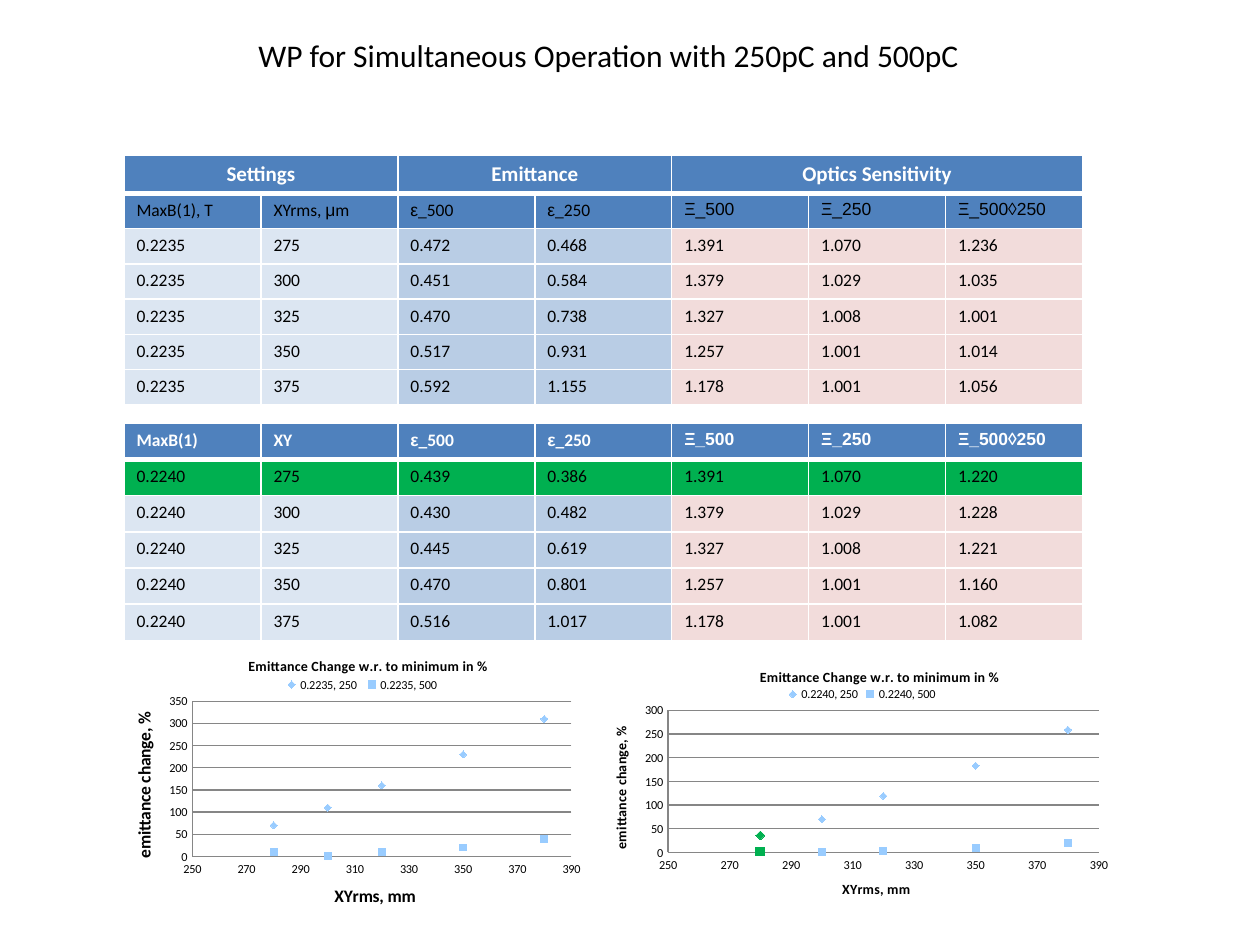
from dataclasses import dataclass
from itertools import groupby

from lxml.etree import SubElement
from pptx import Presentation
from pptx.chart.data import XyChartData
from pptx.dml.color import RGBColor
from pptx.enum.chart import (
    XL_CHART_TYPE as ChartType,
    XL_LEGEND_POSITION as LegendSpot,
    XL_MARKER_STYLE as Marker,
    XL_TICK_MARK as Tick,
)
from pptx.enum.text import MSO_ANCHOR as Anchor, PP_ALIGN as Align
from pptx.oxml.ns import qn
from pptx.util import Cm, Pt

COLORS = {
    "black": "000000",
    "white": "FFFFFF",
    "header": "4F81BD",
    "settings": "DCE6F2",
    "emittance": "B9CDE5",
    "optics": "F2DCDB",
    "chosen": "00B050",
    "marker": "99CCFF",
    "grid": "868686",
}
FONT, GREEK_FONT = "Calibri", "Arial"
COLUMN_FILLS = ["settings"] * 2 + ["emittance"] * 2 + ["optics"] * 3
SYMBOLS = ["ε_500", "ε_250", "Ξ_500", "Ξ_250", "Ξ_500◊250"]
SIZES_XY = [275, 300, 325, 350, 375]
PLOTTED_SIZES = [280, 300, 320, 350, 380]
OPTICS = [("1.391", "1.070"), ("1.379", "1.029"), ("1.327", "1.008"),
          ("1.257", "1.001"), ("1.178", "1.001")]
GROUPS = [("Settings", 0, 1), ("Emittance", 2, 3), ("Optics Sensitivity", 4, 6)]


@dataclass
class Scan:
    """Results for one field value: emittances and the combined optics column."""
    field: str
    emittance_500: list[str]
    emittance_250: list[str]
    combined: list[str]

    def rows(self) -> list[list[str]]:
        return [
            [self.field, str(size), e500, e250, *optics, combined]
            for size, e500, e250, optics, combined in zip(
                SIZES_XY, self.emittance_500, self.emittance_250, OPTICS, self.combined)
        ]


@dataclass
class Plot:
    """A scatter chart; title, legend and inner are fractions of its box."""
    field: str
    box: tuple[float, ...]
    title: tuple[float, ...]
    legend: tuple[float, ...]
    inner: tuple[float, ...]
    axis_title_size: int
    top: int
    change_250: list[int]
    change_500: list[int]
    chosen_point: int | None = None


SCANS = [
    Scan("0.2235", ["0.472", "0.451", "0.470", "0.517", "0.592"],
         ["0.468", "0.584", "0.738", "0.931", "1.155"],
         ["1.236", "1.035", "1.001", "1.014", "1.056"]),
    Scan("0.2240", ["0.439", "0.430", "0.445", "0.470", "0.516"],
         ["0.386", "0.482", "0.619", "0.801", "1.017"],
         ["1.220", "1.228", "1.221", "1.160", "1.082"]),
]
PLOTS = [
    Plot("0.2235", (2.31, 13.13, 9.8, 5.59), (0.27, 0.01), (0.34, 0.09, 0.34, 0.06),
         (0.16, 0.18, 0.78, 0.56), 10, 350,
         [70, 110, 160, 230, 310], [10, 0, 10, 20, 40]),
    Plot("0.2240", (12.09, 13.13, 10.59, 5.41), (0.3, 0.05), (0.35, 0.13, 0.3, 0.06),
         (0.13, 0.22, 0.82, 0.53), 8, 300,
         [36, 70, 119, 183, 259], [2, 0, 3, 9, 20], chosen_point=0),
]


def color(name: str) -> RGBColor:
    return RGBColor.from_string(COLORS[name])


def style_font(font, size: float, ink: str = "black", bold: bool = False,
               face: str = FONT) -> None:
    font.size, font.bold, font.name = Pt(size), bold, face
    font.color.rgb = color(ink)


def write(frame, text: str, size: float = 10, ink: str = "black", bold: bool = False,
          align: Align | None = None) -> None:
    """Write one paragraph, with Greek letters in their own font."""
    para = frame.paragraphs[0]
    para.alignment = align
    for greek, letters in groupby(text, lambda c: c in "εμ" or text.startswith("Ξ")):
        span = para.add_run()
        span.text = "".join(letters)
        style_font(span.font, size, ink, bold, GREEK_FONT if greek else FONT)


def fill_cell(cell, text: str, fill: str, **text_format) -> None:
    cell.fill.solid()
    cell.fill.fore_color.rgb = color(fill)
    write(cell.text_frame, text, **text_format)


def underline_cell(cell) -> None:
    """Give the cell a thick white bottom border."""
    properties = cell._tc.get_or_add_tcPr()
    border = SubElement(properties, qn("a:lnB"), w=str(Pt(3)))
    properties.insert(0, border)
    fill = SubElement(border, qn("a:solidFill"))
    SubElement(fill, qn("a:srgbClr"), val=COLORS["white"])


def add_grid(page, top: float, row_height: float, row_count: int):
    column_count, column_width = len(COLUMN_FILLS), 2.76
    table = page.shapes.add_table(
        row_count, column_count, Cm(2.5), Cm(top),
        Cm(column_width * column_count), Cm(row_height * row_count)).table
    table.horz_banding = False
    for row in table.rows:
        row.height = Cm(row_height)
    for cell in table.rows[0].cells:
        underline_cell(cell)
    return table


def fill_rows(table, first_row: int, header: list[str], scan: Scan,
              chosen_row: int | None = None, **header_format) -> None:
    for column, text in enumerate(header):
        fill_cell(table.cell(first_row, column), text, "header", **header_format)
    for index, values in enumerate(scan.rows()):
        for column, (text, fill) in enumerate(zip(values, COLUMN_FILLS)):
            fill_cell(table.cell(first_row + 1 + index, column), text,
                      "chosen" if index == chosen_row else fill)


def add_group_header(table) -> None:
    for text, first, last in GROUPS:
        table.cell(0, first).merge(table.cell(0, last))
        fill_cell(table.cell(0, first), text, "header", size=12, ink="white",
                  bold=True, align=Align.CENTER)


def place(part, index: int, fractions: tuple[float, ...], inner: bool = False) -> None:
    """Fix a chart part by fractions of the chart; index is where its layout belongs."""
    for old in part.findall(qn("c:layout")):
        part.remove(old)
    layout = SubElement(part, qn("c:layout"))
    part.insert(index, layout)
    manual = SubElement(layout, qn("c:manualLayout"))
    target = [("layoutTarget", "inner")] if inner else []
    for tag, value in [*target, ("xMode", "edge"), ("yMode", "edge"),
                       *zip("xywh", fractions)]:
        SubElement(manual, qn(f"c:{tag}")).set("val", str(value))


def style_axis(axis, title: str, title_size: int, low: int, high: int, step: int) -> None:
    axis.minimum_scale, axis.maximum_scale, axis.major_unit = low, high, step
    axis.major_tick_mark = axis.minor_tick_mark = Tick.NONE
    axis.format.line.color.rgb = color("grid")
    style_font(axis.tick_labels.font, 7)
    write(axis.axis_title.text_frame, title, size=title_size, bold=True)


def paint_marker(marker, style: Marker, size: int, fill: str) -> None:
    marker.style, marker.size = style, size
    marker.format.fill.solid()
    marker.format.fill.fore_color.rgb = color(fill)
    marker.format.line.fill.background()


def add_scatter(page, plot: Plot) -> None:
    data = XyChartData()
    for charge, changes in (("250", plot.change_250), ("500", plot.change_500)):
        entry = data.add_series(f"{plot.field}, {charge}")
        for size, change in zip(PLOTTED_SIZES, changes):
            entry.add_data_point(size, change)
    chart = page.shapes.add_chart(ChartType.XY_SCATTER, *map(Cm, plot.box), data).chart
    style_font(chart.font, 10)
    title = chart.chart_title
    write(title.text_frame, "Emittance Change w.r. to minimum in %", size=8, bold=True)
    chart.has_legend = True
    chart.legend.position = LegendSpot.TOP
    chart.legend.include_in_layout = False
    style_font(chart.legend.font, 7)
    style_axis(chart.category_axis, "XYrms, mm", plot.axis_title_size, 250, 390, 20)
    style_axis(chart.value_axis, "emittance change, %", plot.axis_title_size, 0, plot.top, 50)
    chart.category_axis.has_major_gridlines = False
    chart.value_axis.major_gridlines.format.line.color.rgb = color("grid")
    chart.plots[0].vary_by_categories = False
    for series, style in zip(chart.plots[0].series, (Marker.DIAMOND, Marker.SQUARE)):
        series.format.line.fill.background()
        paint_marker(series.marker, style, 4, "marker")
        if plot.chosen_point is not None:
            paint_marker(series.points[plot.chosen_point].marker, style, 5, "chosen")
    place(title._element, 1, plot.title)
    place(chart.legend._element, 1, plot.legend)
    place(chart._chartSpace.chart.plotArea, 0, plot.inner, inner=True)


def main() -> None:
    deck = Presentation()
    deck.slide_width, deck.slide_height = Cm(25.4), Cm(19.05)
    page = deck.slides.add_slide(deck.slide_layouts[5])
    title = page.shapes.title
    title.left, title.top, title.width, title.height = map(Cm, (4.79, 0.6, 14.96, 1.02))
    title.text_frame.word_wrap = False
    title.text_frame.vertical_anchor = Anchor.MIDDLE
    write(title.text_frame, "WP for Simultaneous Operation with 250pC and 500pC",
          size=18, align=Align.CENTER)
    grouped = add_grid(page, 3.13, 0.71, 7)
    add_group_header(grouped)
    fill_rows(grouped, 1, ["MaxB(1), T", "XYrms, μm", *SYMBOLS], SCANS[0])
    plain = add_grid(page, 8.53, 0.73, 6)
    fill_rows(plain, 0, ["MaxB(1)", "XY", *SYMBOLS], SCANS[1], chosen_row=0,
              ink="white", bold=True)
    for plot in PLOTS:
        add_scatter(page, plot)
    deck.save("out.pptx")


if __name__ == "__main__":
    main()
